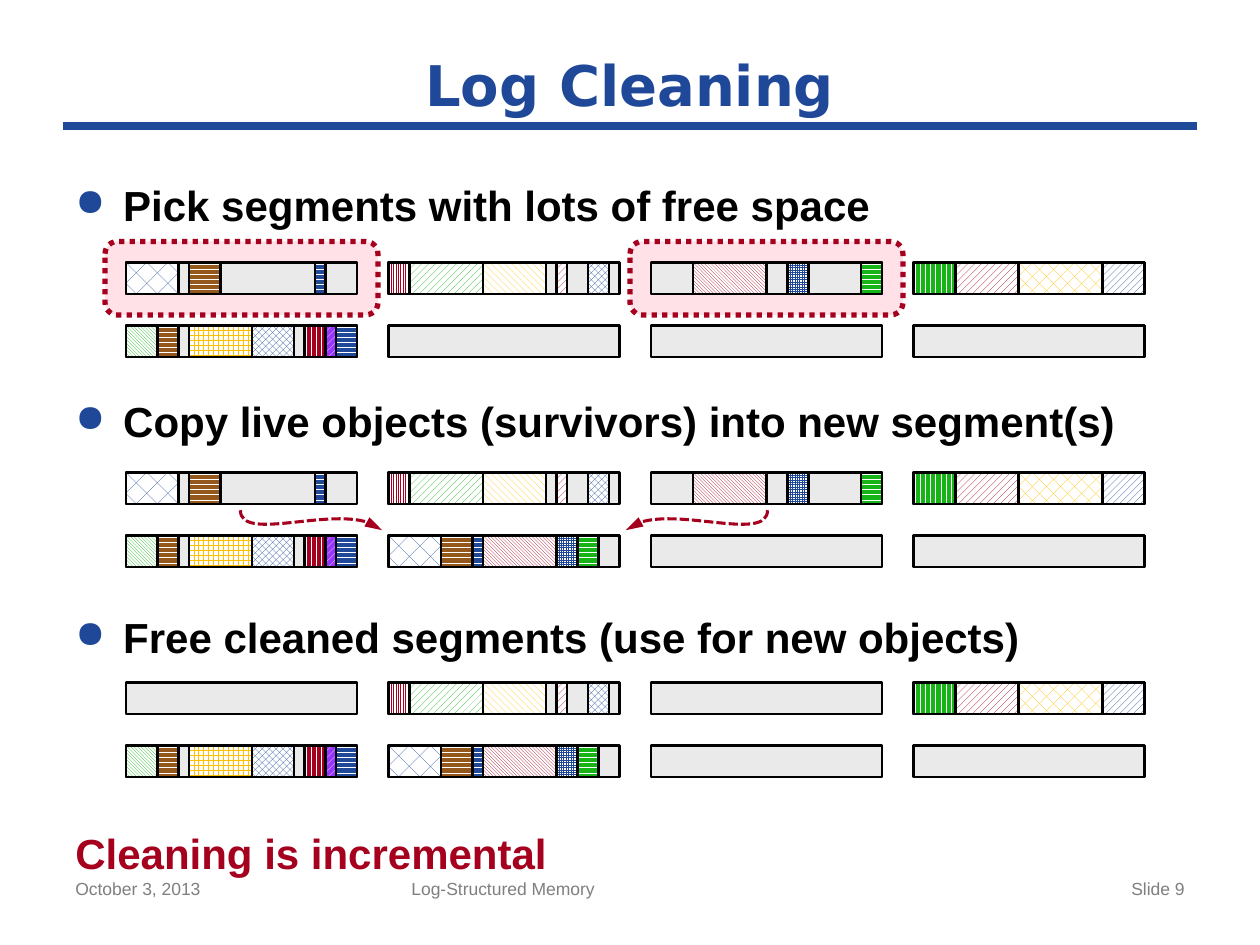
"""Build the log cleaning slide on a grid of twelfths of an inch."""
from dataclasses import dataclass, replace
from itertools import accumulate

from lxml import etree
from pptx import Presentation
from pptx.dml.color import RGBColor
from pptx.enum.dml import MSO_LINE, MSO_PATTERN
from pptx.enum.shapes import MSO_CONNECTOR, MSO_SHAPE
from pptx.enum.text import MSO_ANCHOR, PP_ALIGN
from pptx.oxml.ns import qn
from pptx.util import Inches, Pt

RECT, ROUND = MSO_SHAPE.RECTANGLE, MSO_SHAPE.ROUNDED_RECTANGLE
STRAIGHT = MSO_CONNECTOR.STRAIGHT
DOT, DASH = MSO_LINE.ROUND_DOT, MSO_LINE.SQUARE_DOT
LEFT, CENTER, RIGHT = PP_ALIGN.LEFT, PP_ALIGN.CENTER, PP_ALIGN.RIGHT
TOP, MIDDLE = MSO_ANCHOR.TOP, MSO_ANCHOR.MIDDLE
BRICK, DIAMOND = MSO_PATTERN.DIAGONAL_BRICK, MSO_PATTERN.OUTLINED_DIAMOND
HORZ, VERT = MSO_PATTERN.DARK_HORIZONTAL, MSO_PATTERN.DARK_VERTICAL
LIGHT_VERT, DOWN = MSO_PATTERN.LIGHT_VERTICAL, MSO_PATTERN.DARK_DOWNWARD_DIAGONAL
WIDE_UP = MSO_PATTERN.WIDE_UPWARD_DIAGONAL
WIDE_DOWN = MSO_PATTERN.WIDE_DOWNWARD_DIAGONAL
PCT25, CHECK = MSO_PATTERN.PERCENT_25, MSO_PATTERN.LARGE_CHECKER_BOARD
SMALL_GRID, LARGE_GRID = MSO_PATTERN.SMALL_GRID, MSO_PATTERN.LARGE_GRID

BLUE, RED, GREEN, BROWN = "1F4899", "A5001E", "16B416", "94581C"
GOLD, YELLOW, PURPLE, PINK = "FFC000", "FFC611", "9933FF", "FFE1E7"
WHITE, BLACK, FREE, GRAY = "FFFFFF", "000000", "EAEAEA", "7F7F7F"
SEGMENT_WIDTH, SEGMENT_HEIGHT, SEGMENT_PITCH, FIRST_COL = 22, 3, 25, 12
STAGE_ROWS, LOWER_ROW = (25, 45, 65), 6


@dataclass(frozen=True)
class Entry:
    """A live object in a segment, in grid units from the segment's left."""
    start: int
    width: int
    pattern: MSO_PATTERN
    fore: str
    back: str = WHITE


@dataclass(frozen=True)
class Label:
    """A line of text in a box on the grid."""
    text: str
    box: tuple
    size: int
    color: str
    align: PP_ALIGN = LEFT
    font: str = "Arial"
    bold: bool = False
    anchor: MSO_ANCHOR = TOP


def pack(entries: list) -> list:
    """Place entries side by side from the start of a segment."""
    starts = accumulate((e.width for e in entries), initial=0)
    return [replace(e, start=start) for e, start in zip(entries, starts)]


SPARSE_A = [Entry(0, 5, BRICK, BLUE), Entry(6, 3, HORZ, BROWN), Entry(18, 1, HORZ, BLUE)]
SPARSE_B = [Entry(4, 7, DOWN, RED), Entry(13, 2, SMALL_GRID, BLUE), Entry(20, 2, HORZ, GREEN)]
MIXED = [Entry(0, 2, LIGHT_VERT, RED), Entry(2, 7, WIDE_UP, GREEN),
         Entry(9, 6, WIDE_DOWN, YELLOW), Entry(16, 1, WIDE_UP, RED),
         Entry(19, 2, DIAMOND, BLUE)]
FULL = [Entry(0, 4, VERT, GREEN), Entry(4, 6, WIDE_UP, RED),
        Entry(10, 8, PCT25, GOLD), Entry(18, 4, WIDE_UP, BLUE)]
DENSE = [Entry(0, 3, DOWN, GREEN), Entry(3, 2, HORZ, BROWN),
         Entry(6, 6, LARGE_GRID, GOLD), Entry(12, 4, CHECK, BLUE),
         Entry(17, 2, VERT, RED), Entry(19, 1, WIDE_UP, WHITE, PURPLE),
         Entry(20, 2, HORZ, BLUE)]
SURVIVORS = pack(SPARSE_A + SPARSE_B)
EMPTY = []

STAGES = [
    ([SPARSE_A, MIXED, SPARSE_B, FULL], [DENSE, EMPTY, EMPTY, EMPTY]),
    ([SPARSE_A, MIXED, SPARSE_B, FULL], [DENSE, SURVIVORS, EMPTY, EMPTY]),
    ([EMPTY, MIXED, EMPTY, FULL], [DENSE, SURVIVORS, EMPTY, EMPTY]),
]
LABELS = [
    Label("Log Cleaning", (6, 4, 108, 8), 32, BLUE, CENTER, "DejaVu Sans", True, MIDDLE),
    Label("October 3, 2013", (6, 83, 28, 5), 10, GRAY),
    Label("Log-Structured Memory", (38, 83, 45, 5), 10, GRAY),
    Label("Slide 9", (86, 83, 28, 5), 10, GRAY, RIGHT),
]
STEPS = ["Pick segments with lots of free space",
         "Copy live objects (survivors) into new segment(s)",
         "Free cleaned segments (use for new objects)"]
CONCLUSION = "Cleaning is incremental"
ARROW_CURVE = [(22.9, 48.6), (22.9, 51.6), (33.2, 47.6), (36.4, 50.5)]
MIRROR_SUM = 96


def rgb(color: str) -> RGBColor:
    """Turn a hex string into a colour."""
    return RGBColor.from_string(color)


def grid(*units: float) -> list:
    """Turn grid units into lengths."""
    return [Inches(u / 12) for u in units]


def style_line(line, color: str, width: float, dash=None) -> None:
    """Set the colour, width and dash of a line."""
    line.color.rgb = rgb(color)
    line.width = Pt(width)
    if dash is not None:
        line.dash_style = dash


def style_run(r, size: int, color: str, font: str, bold: bool) -> None:
    """Set the font of a run."""
    r.font.size, r.font.name, r.font.bold = Pt(size), font, bold
    r.font.color.rgb = rgb(color)


def add_block(s, box: tuple, fill: str):
    """Add a black-edged rectangle with a solid fill."""
    sp = s.shapes.add_shape(RECT, *grid(*box))
    sp.shadow.inherit = False
    sp.fill.solid()
    sp.fill.fore_color.rgb = rgb(fill)
    style_line(sp.line, BLACK, 1.5)
    return sp


def add_segment(s, col: int, row: int, entries: list) -> None:
    """Add a segment and the live objects in it."""
    add_block(s, (col, row, SEGMENT_WIDTH, SEGMENT_HEIGHT), FREE)
    for e in entries:
        sp = add_block(s, (col + e.start, row, e.width, SEGMENT_HEIGHT), WHITE)
        sp.fill.patterned()
        sp.fill.pattern = e.pattern
        sp.fill.fore_color.rgb = rgb(e.fore)
        sp.fill.back_color.rgb = rgb(e.back)


def add_highlight(s, segment: int) -> None:
    """Add a dotted frame behind a segment of the first stage."""
    col, row = FIRST_COL + segment * SEGMENT_PITCH, STAGE_ROWS[0]
    sp = s.shapes.add_shape(ROUND, *grid(col - 2, row - 2, SEGMENT_WIDTH + 4, SEGMENT_HEIGHT + 4))
    sp.shadow.inherit = False
    sp.fill.solid()
    sp.fill.fore_color.rgb = rgb(PINK)
    style_line(sp.line, RED, 3, DOT)


def add_curve(s, points: list) -> None:
    """Add a dashed cubic curve with an arrowhead at its end."""
    start, *rest = [grid(*point) for point in points]
    builder = s.shapes.build_freeform(*start)
    builder.add_line_segments([rest[-1]], close=False)
    sp = builder.convert_to_shape()
    sp.shadow.inherit = False
    sp.fill.background()
    style_line(sp.line, RED, 1.75, DASH)
    etree.SubElement(sp.line._get_or_add_ln(), qn("a:tailEnd"), type="triangle", len="lg")
    segment = next(sp._element.iter(qn("a:lnTo")))
    curve = etree.Element(qn("a:cubicBezTo"))
    for x, y in rest:
        etree.SubElement(curve, qn("a:pt"), x=str(int(x - sp.left)), y=str(int(y - sp.top)))
    segment.getparent().replace(segment, curve)


def add_label(s, label: Label) -> None:
    """Add a one-line text box."""
    tf = s.shapes.add_textbox(*grid(*label.box)).text_frame
    tf.word_wrap, tf.vertical_anchor = True, label.anchor
    p = tf.paragraphs[0]
    p.text, p.alignment = label.text, label.align
    style_run(p.runs[0], label.size, label.color, label.font, label.bold)


def add_bullet(p) -> None:
    """Give a paragraph a hanging blue bullet."""
    pPr = p._p.get_or_add_pPr()
    indent = Inches(0.38)
    pPr.set("marL", str(indent))
    pPr.set("indent", str(-indent))
    color = etree.SubElement(pPr, qn("a:buClr"))
    etree.SubElement(color, qn("a:srgbClr"), val=BLUE)
    etree.SubElement(pPr, qn("a:buSzPct"), val="90000")
    etree.SubElement(pPr, qn("a:buChar"), char="●")


def add_body(s) -> None:
    """Add the steps and the conclusion, spaced to leave room for the segments."""
    tf = s.shapes.add_textbox(*grid(6, 16, 108, 63)).text_frame
    tf.word_wrap, tf.margin_top = True, Inches(0.09)
    for i, text in enumerate(STEPS + [CONCLUSION]):
        p = tf.add_paragraph() if i else tf.paragraphs[0]
        p.text, p.space_before = text, Pt(94.7 if i else 0)
        style_run(p.runs[0], 24, BLACK if text in STEPS else RED, "Arial", True)
        if text in STEPS:
            add_bullet(p)


def main() -> None:
    """Build and save the slide."""
    prs = Presentation()
    prs.slide_width, prs.slide_height = Inches(10), Inches(7.5)
    s = prs.slides.add_slide(prs.slide_layouts[6])
    rule = s.shapes.add_connector(STRAIGHT, *grid(6, 12, 114, 12))
    style_line(rule.line, BLUE, 4.5)
    etree.SubElement(rule._element.spPr, qn("a:effectLst"))
    add_body(s)
    for label in LABELS:
        add_label(s, label)
    for segment in (0, 2):
        add_highlight(s, segment)
    for top, stage in zip(STAGE_ROWS, STAGES):
        for i, segments in enumerate(stage):
            for j, entries in enumerate(segments):
                add_segment(s, FIRST_COL + j * SEGMENT_PITCH, top + i * LOWER_ROW, entries)
    add_curve(s, ARROW_CURVE)
    add_curve(s, [(MIRROR_SUM - x, y) for x, y in ARROW_CURVE])
    prs.save("out.pptx")


if __name__ == "__main__":
    main()
